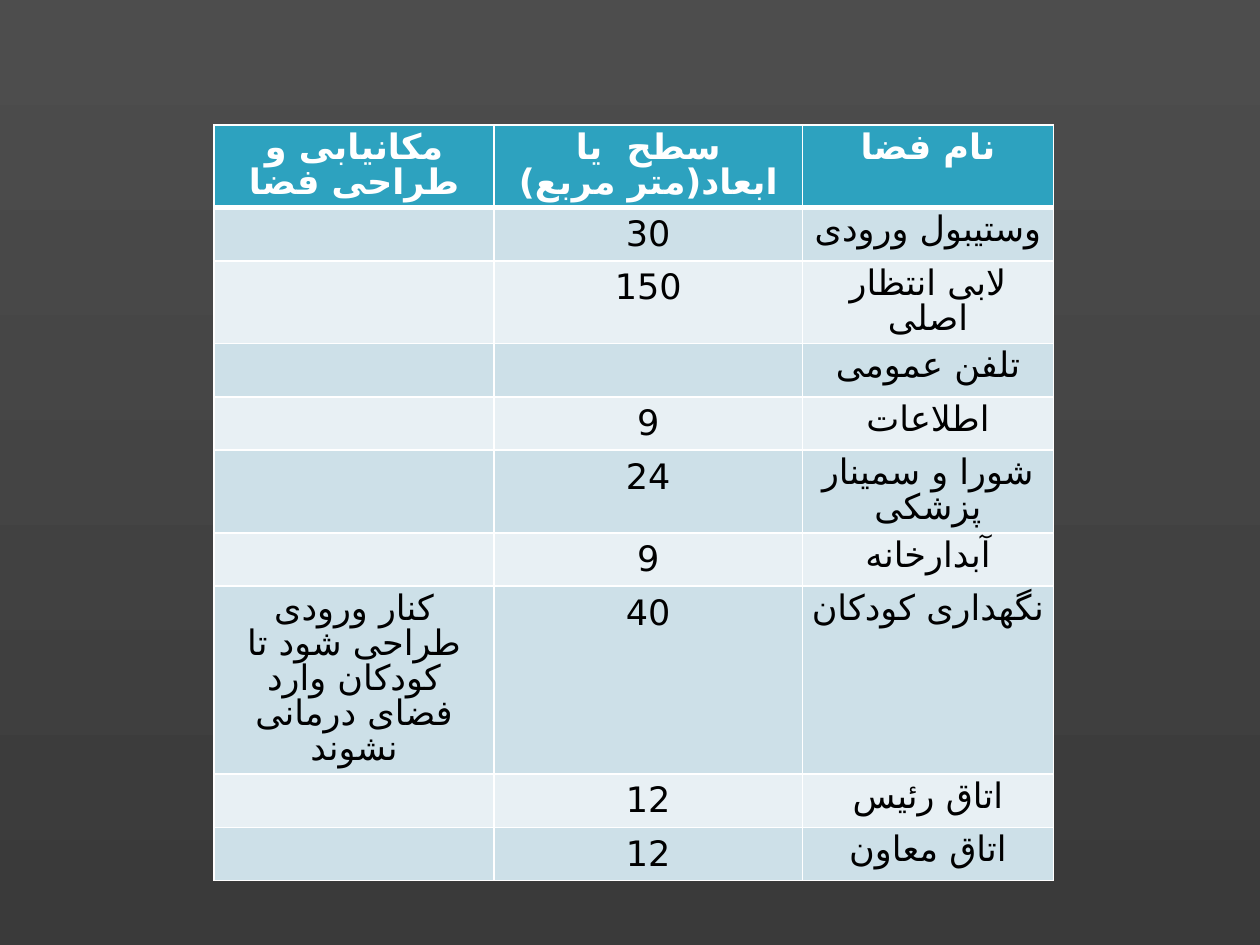
from lxml.etree import SubElement
from pptx import Presentation
from pptx.dml.color import RGBColor
from pptx.enum.text import PP_ALIGN
from pptx.oxml.ns import qn
from pptx.util import Inches, Pt


def color(hex_value):
    return RGBColor.from_string(hex_value)


def add_border(cell, side, position, points):
    properties = cell._tc.get_or_add_tcPr()
    edge = SubElement(properties, qn(f"a:{side}"), w=str(Pt(points)))
    solid = SubElement(edge, qn("a:solidFill"))
    SubElement(solid, qn("a:srgbClr"), val="FFFFFF")
    properties.insert(position, edge)


FONT_NAME = "DejaVu Sans"
FONT_SIZE = 20
HEADER_FILL = "2DA2BF"
BAND_FILLS = ["E8F0F4", "CDE0E8"]
COLUMN_SHARES = [0.222, 0.245, 0.199]
ROW_SHARE = 0.055
TEXT_MARGINS = {
    "margin_left": Inches(0.07),
    "margin_right": Inches(0.07),
    "margin_top": Inches(0.06),
    "margin_bottom": Inches(0.04),
}

spaces = [
    ("مکانیابی و طراحی فضا", "سطح  یا ابعاد(متر مربع)", "نام فضا"),
    ("", "30", "وستیبول ورودی"),
    ("", "150", "لابی انتظار اصلی"),
    ("", "", "تلفن عمومی"),
    ("", "9", "اطلاعات"),
    ("", "24", "شورا و سمینار پزشکی"),
    ("", "9", "آبدارخانه"),
    ("کنار ورودی طراحی شود تا کودکان وارد فضای درمانی نشوند", "40", "نگهداری کودکان"),
    ("", "12", "اتاق رئیس"),
    ("", "12", "اتاق معاون"),
]

presentation = Presentation()
presentation.slide_width = Inches(10)
presentation.slide_height = Inches(7.5)
width, height = presentation.slide_width, presentation.slide_height
slide = presentation.slides.add_slide(presentation.slide_layouts[6])

backdrop = slide.background.fill
backdrop.gradient()
backdrop.gradient_angle = 270
for stop, shade in zip(backdrop.gradient_stops, ["4D4D4D", "3A3A3A"]):
    stop.color.rgb = color(shade)

program = slide.shapes.add_table(
    len(spaces), len(COLUMN_SHARES),
    int(width * 0.17), int(height * 0.132),
    int(width * sum(COLUMN_SHARES)), int(height * ROW_SHARE * len(spaces)),
).table
for column, share in zip(program.columns, COLUMN_SHARES):
    column.width = int(width * share)
for row in program.rows:
    row.height = int(height * ROW_SHARE)

for row_index, entries in enumerate(spaces):
    is_header = row_index == 0
    font_format = {"size": Pt(FONT_SIZE), "name": FONT_NAME, "bold": is_header}
    for column_index, entry in enumerate(entries):
        cell = program.cell(row_index, column_index)
        cell.fill.solid()
        cell.fill.fore_color.rgb = color(HEADER_FILL if is_header else BAND_FILLS[row_index % 2])
        for position, side in enumerate(["lnL", "lnR", "lnT", "lnB"]):
            thick = (is_header and side == "lnB") or (row_index == 1 and side == "lnT")
            add_border(cell, side, position, 3 if thick else 1)

        paragraph = cell.text_frame.paragraphs[0]
        paragraph.alignment = PP_ALIGN.CENTER
        if not entry:
            ending = paragraph._p.get_or_add_endParaRPr()
            ending.set("sz", str(FONT_SIZE * 100))
            for script in ["latin", "cs"]:
                SubElement(ending, qn(f"a:{script}"), typeface=FONT_NAME)
            continue
        if not entry.isdigit():
            paragraph._p.get_or_add_pPr().set("rtl", "1")
            paragraph.line_spacing = Pt(FONT_SIZE)
            for attribute, value in TEXT_MARGINS.items():
                setattr(cell, attribute, value)
        run = paragraph.add_run()
        run.text = entry
        for attribute, value in font_format.items():
            setattr(run.font, attribute, value)
        run.font.color.rgb = color("FFFFFF" if is_header else "000000")
        SubElement(run._r.get_or_add_rPr(), qn("a:cs"), typeface=FONT_NAME)

presentation.save("out.pptx")
